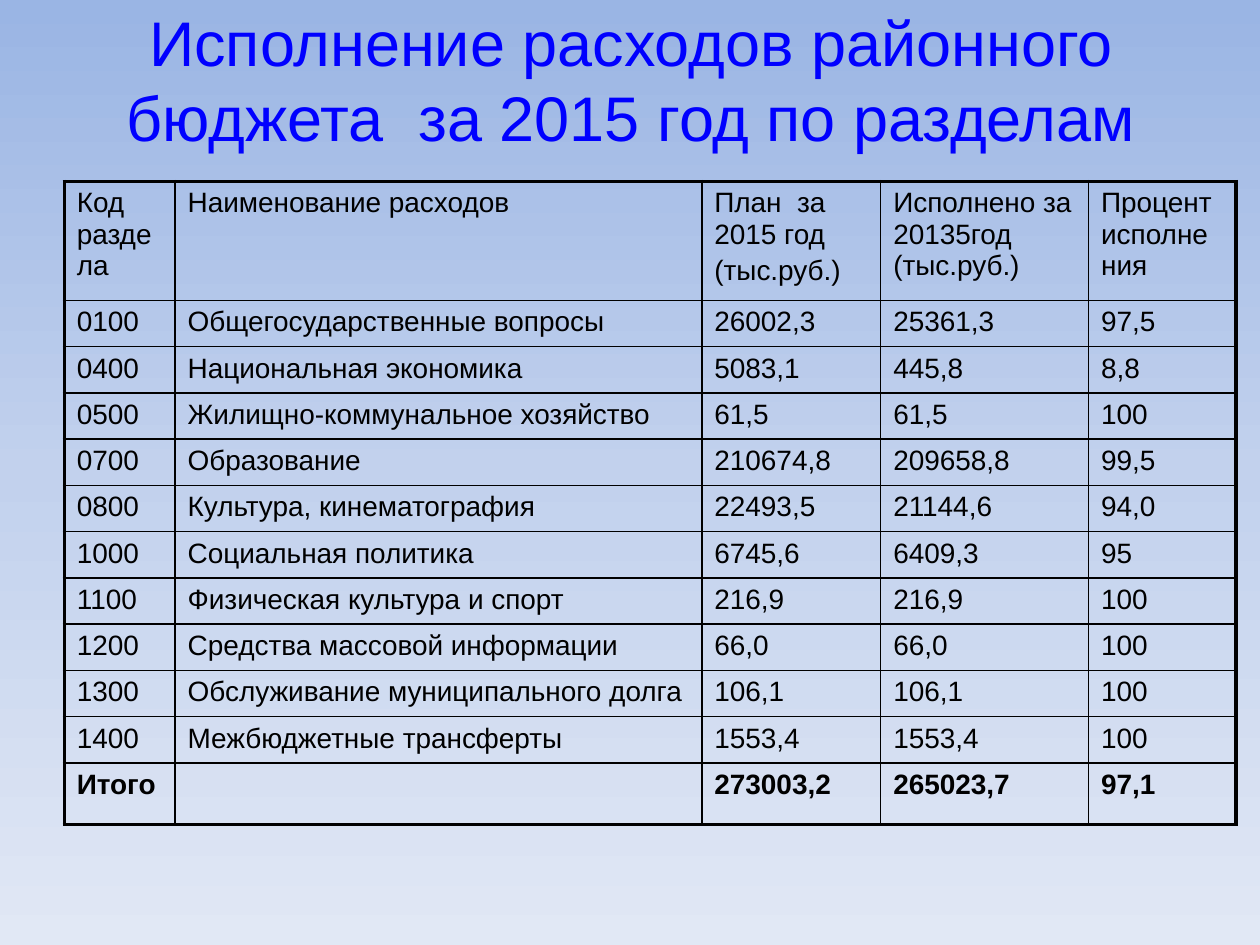
import copy
from dataclasses import dataclass

import pptx
import pptx.dml.color
import pptx.enum.text
import pptx.oxml
import pptx.oxml.ns
import pptx.util
from pptx.util import Inches


@dataclass(frozen=True)
class Theme:
    font: str = "Arial"
    title_color: str = "0000FF"
    text_color: str = "000000"
    border_color: str = "000000"
    gradient: tuple = ((0, "9AB5E4"), (0.5, "C2D1ED"), (1, "E1E8F5"))
    title_size: float = 36
    cell_size: float = 16
    cell_space: float = 3.2
    outer_border: float = 2.25
    inner_border: float = 1


THEME = Theme()
TITLE = "Исполнение расходов районного бюджета  за 2015 год по разделам"
COLUMN_WIDTHS = (0.88, 4.18, 1.42, 1.65, 1.17)
HEADER_HEIGHT, BODY_HEIGHT, TOTAL_HEIGHT = 0.78, 0.31, 0.49
ROWS = (
    ("Код раздела", "Наименование расходов", "План  за 2015 год\n(тыс.руб.)",
     "Исполнено за 20135год (тыс.руб.)", "Процент исполнения"),
    ("0100", "Общегосударственные вопросы", "26002,3", "25361,3", "97,5"),
    ("0400", "Национальная экономика", "5083,1", "445,8", "8,8"),
    ("0500", "Жилищно-коммунальное хозяйство", "61,5", "61,5", "100"),
    ("0700", "Образование", "210674,8", "209658,8", "99,5"),
    ("0800", "Культура, кинематография", "22493,5", "21144,6", "94,0"),
    ("1000", "Социальная политика", "6745,6", "6409,3", "95"),
    ("1100", "Физическая культура и спорт", "216,9", "216,9", "100"),
    ("1200", "Средства массовой информации", "66,0", "66,0", "100"),
    ("1300", "Обслуживание муниципального долга", "106,1", "106,1", "100"),
    ("1400", "Межбюджетные трансферты", "1553,4", "1553,4", "100"),
    ("Итого", "", "273003,2", "265023,7", "97,1"),
)


def rgb(value):
    return pptx.dml.color.RGBColor.from_string(value)


def format_runs(p, size, color, bold=False):
    for r in p.runs:
        r.font.name = THEME.font
        r.font.size = pptx.util.Pt(size)
        r.font.color.rgb = rgb(color)
        r.font.bold = bold


def set_background(s):
    fill = s.background.fill
    fill.gradient()
    fill.gradient_angle = 270
    stops = next(s.element.iter(pptx.oxml.ns.qn("a:gsLst")))
    stops.insert(1, copy.deepcopy(stops[0]))
    for stop, (position, color) in zip(fill.gradient_stops, THEME.gradient):
        stop.position = position
        stop.color.rgb = rgb(color)


def add_title(s):
    sp = s.shapes.add_textbox(Inches(0.51), Inches(0), Inches(9), Inches(1.25))
    tf = sp.text_frame
    tf.word_wrap = True
    tf.vertical_anchor = pptx.enum.text.MSO_ANCHOR.MIDDLE
    tf.text = TITLE
    p = tf.paragraphs[0]
    p.alignment = pptx.enum.text.PP_ALIGN.CENTER
    format_runs(p, THEME.title_size, THEME.title_color)


def set_borders(cell, outer_sides):
    tc_pr = cell._tc.get_or_add_tcPr()
    for side in "LRTB":
        points = THEME.outer_border if side in outer_sides else THEME.inner_border
        tc_pr.append(pptx.oxml.parse_xml(
            f'<a:ln{side} {pptx.oxml.ns.nsdecls("a")} w="{pptx.util.Pt(points)}">'
            f'<a:solidFill><a:srgbClr val="{THEME.border_color}"/></a:solidFill>'
            f'</a:ln{side}>'))


def fill_cell(cell, text, outer_sides, bold):
    set_borders(cell, outer_sides)
    cell.fill.background()
    cell.text_frame.text = text
    for p in cell.text_frame.paragraphs:
        p.space_before = pptx.util.Pt(THEME.cell_space)
        format_runs(p, THEME.cell_size, THEME.text_color, bold)


def add_budget_table(s):
    last_row, last_col = len(ROWS) - 1, len(COLUMN_WIDTHS) - 1
    frame = s.shapes.add_table(len(ROWS), len(COLUMN_WIDTHS), Inches(0.51),
                               Inches(1.44), Inches(9.29), Inches(5.11))
    table = frame.table
    table.first_row = False
    table.horz_banding = False
    for column, width in zip(table.columns, COLUMN_WIDTHS):
        column.width = Inches(width)
    heights = [HEADER_HEIGHT] + [BODY_HEIGHT] * (last_row - 1) + [TOTAL_HEIGHT]
    for i, (values, height) in enumerate(zip(ROWS, heights)):
        table.rows[i].height = Inches(height)
        for j, text in enumerate(values):
            edges = {"L": j == 0, "R": j == last_col, "T": i == 0, "B": i == last_row}
            outer_sides = [side for side, is_outer in edges.items() if is_outer]
            fill_cell(table.cell(i, j), text, outer_sides, bold=i == last_row)
    frame.height = Inches(5.11)


def main():
    prs = pptx.Presentation()
    prs.slide_width, prs.slide_height = Inches(10), Inches(7.5)
    s = prs.slides.add_slide(prs.slide_layouts[6])
    set_background(s)
    add_title(s)
    add_budget_table(s)
    prs.save("out.pptx")


if __name__ == "__main__":
    main()
